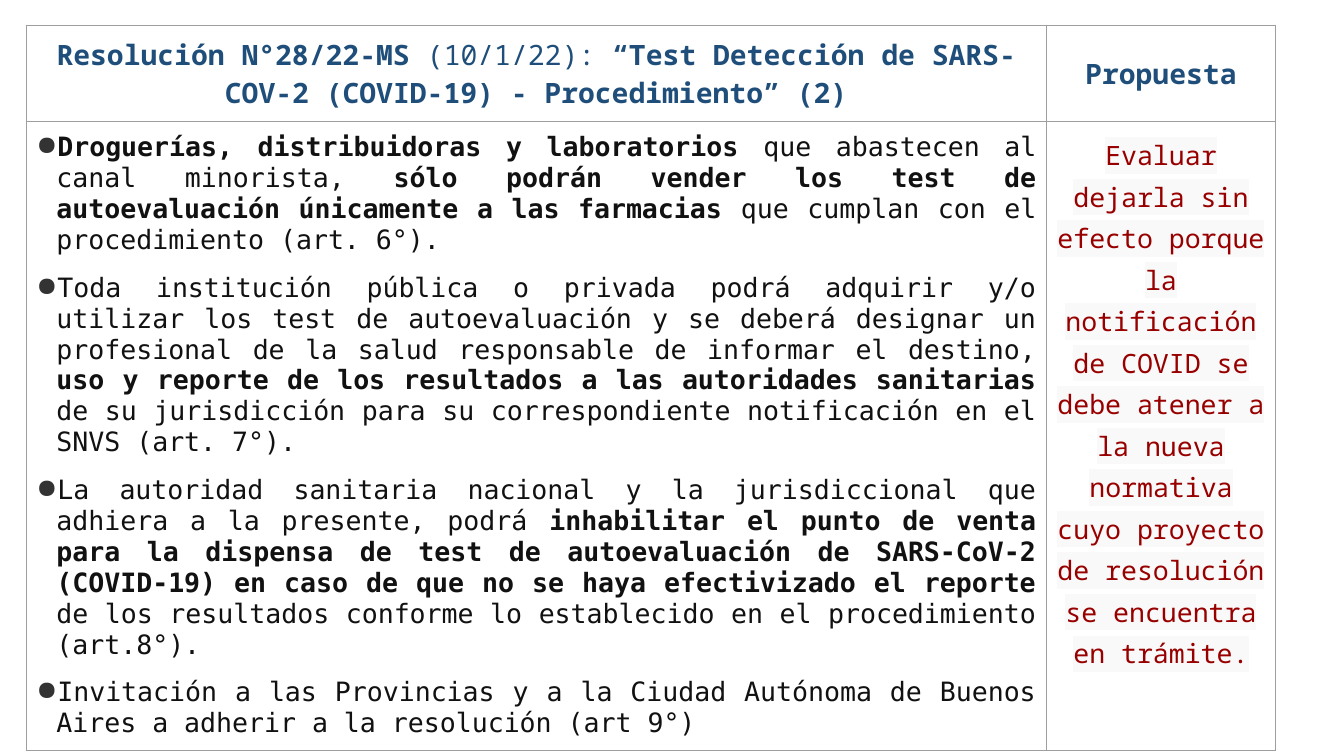
from dataclasses import dataclass

from lxml.etree import SubElement
from pptx import Presentation
from pptx.dml.color import RGBColor
from pptx.enum.text import MSO_ANCHOR, PP_ALIGN
from pptx.oxml.ns import qn
from pptx.util import Inches, Pt


@dataclass(frozen=True)
class Theme:
    navy: str = "1E4E79"
    ink: str = "111111"
    red: str = "980000"
    dot: str = "333333"
    glow: str = "F9F9F9"
    rule: str = "9E9E9E"
    paper: str = "FFFFFF"
    head: int = 20
    body: int = 19
    line: float = 0.75
    gap: int = 6
    pad: float = 0.1
    hang: float = 0.2
    noto: str = "Noto Sans Mono"
    mono: str = "DejaVu Sans Mono"


def tint(node, tag, color):
    item = SubElement(node, qn(tag))
    SubElement(item, qn("a:srgbClr"), val=color)
    return item


def write(par, text, *, font, size, color, align, glow=None, lead=None):
    par.alignment = align
    if lead:
        par.line_spacing = lead
    for i, part in enumerate(text.split("**")):
        if not part:
            continue
        run = par.add_run()
        run.text = part
        run.font.name = font
        run.font.size = Pt(size)
        run.font.bold = i % 2 == 1
        run.font.color.rgb = RGBColor.from_string(color)
        if glow:
            props = run.font._element
            mark = tint(props, "a:highlight", glow)
            props.find(qn("a:solidFill")).addnext(mark)


class Board:
    def __init__(self, deck, theme):
        self.deck, self.theme = deck, theme
        self.slide = deck.slides.add_slide(deck.slide_layouts[6])
        fill = self.slide.background.fill
        fill.solid()
        fill.fore_color.rgb = RGBColor.from_string(theme.paper)

    def wide(self, share):
        return round(self.deck.slide_width * share / 100)

    def tall(self, share):
        return round(self.deck.slide_height * share / 100)

    def table(self, left, top, cols, rows):
        frame = self.slide.shapes.add_table(
            len(rows), len(cols), self.wide(left), self.tall(top),
            self.wide(sum(cols)), self.tall(sum(rows)))
        grid = frame.table
        grid.first_row = grid.horz_banding = False
        for col, share in zip(grid.columns, cols):
            col.width = self.wide(share)
        for row, share in zip(grid.rows, rows):
            row.height = self.tall(share)
        for cell in grid.iter_cells():
            self.frame(cell)
        return grid

    def frame(self, cell):
        pad = Inches(self.theme.pad)
        cell.margin_left = cell.margin_right = pad
        cell.margin_top = cell.margin_bottom = pad
        props = cell._tc.get_or_add_tcPr()
        for side in "LRTB":
            edge = SubElement(props, qn(f"a:ln{side}"), w=str(Pt(self.theme.line)))
            tint(edge, "a:solidFill", self.theme.rule)
        cell.fill.background()

    def head(self, cell, text):
        cell.vertical_anchor = MSO_ANCHOR.MIDDLE
        write(cell.text_frame.paragraphs[0], text, font=self.theme.noto,
              size=self.theme.head, color=self.theme.navy, align=PP_ALIGN.CENTER)

    def points(self, cell, texts):
        theme, box = self.theme, cell.text_frame
        for i, text in enumerate(texts):
            par = box.add_paragraph() if i else box.paragraphs[0]
            props = par._p.get_or_add_pPr()
            props.set("marL", str(Inches(theme.hang)))
            props.set("indent", str(-Inches(theme.hang)))
            tint(props, "a:buClr", theme.dot)
            SubElement(props, qn("a:buChar"), char="●")
            par.space_before = Pt(theme.gap if i else 0)
            par.space_after = Pt(theme.gap)
            write(par, text, font=theme.mono, size=theme.body,
                  color=theme.ink, align=PP_ALIGN.JUSTIFY)

    def advice(self, cell, text):
        write(cell.text_frame.paragraphs[0], text, font=self.theme.noto,
              size=self.theme.body, color=self.theme.red,
              align=PP_ALIGN.CENTER, glow=self.theme.glow, lead=1.15)


HEADS = [
    "**Resolución N°28/22-MS **(10/1/22): **“Test Detección de SARS-COV-2 "
    "(COVID-19) - Procedimiento” (2)**",
    "**Propuesta**",
]
POINTS = [
    "**Droguerías, distribuidoras y laboratorios **que abastecen al canal "
    "minorista, **sólo podrán vender los test de autoevaluación únicamente a "
    "las farmacias **que cumplan con el procedimiento (art. 6°).",
    "Toda institución pública o privada podrá adquirir y/o utilizar los test "
    "de autoevaluación y se deberá designar un profesional de la salud "
    "responsable de informar el destino, **uso y reporte de los resultados a "
    "las autoridades sanitarias **de su jurisdicción para su correspondiente "
    "notificación en el SNVS (art. 7°).",
    "La autoridad sanitaria nacional y la jurisdiccional que adhiera a la "
    "presente, podrá **inhabilitar el punto de venta para la dispensa de test "
    "de autoevaluación de SARS-CoV-2 (COVID-19) en caso de que no se haya "
    "efectivizado el reporte **de los resultados conforme lo establecido en "
    "el procedimiento (art.8°).",
    "Invitación a las Provincias y a la Ciudad Autónoma de Buenos Aires a "
    "adherir a la resolución (art 9°)",
]
ADVICE = (
    "Evaluar dejarla sin efecto porque la notificación de COVID se debe atener "
    "a la nueva normativa cuyo proyecto de resolución se encuentra en trámite."
)


def main():
    deck = Presentation()
    deck.slide_width, deck.slide_height = Inches(13.33), Inches(7.5)
    board = Board(deck, Theme())
    grid = board.table(1.95, 3.33, cols=[75.92, 17.03], rows=[12.67, 6.53, 76.6])
    for col, text in enumerate(HEADS):
        board.head(grid.cell(0, col), text)
        grid.cell(1, col).merge(grid.cell(2, col))
    board.points(grid.cell(1, 0), POINTS)
    board.advice(grid.cell(1, 1), ADVICE)
    deck.save("out.pptx")


if __name__ == "__main__":
    main()
